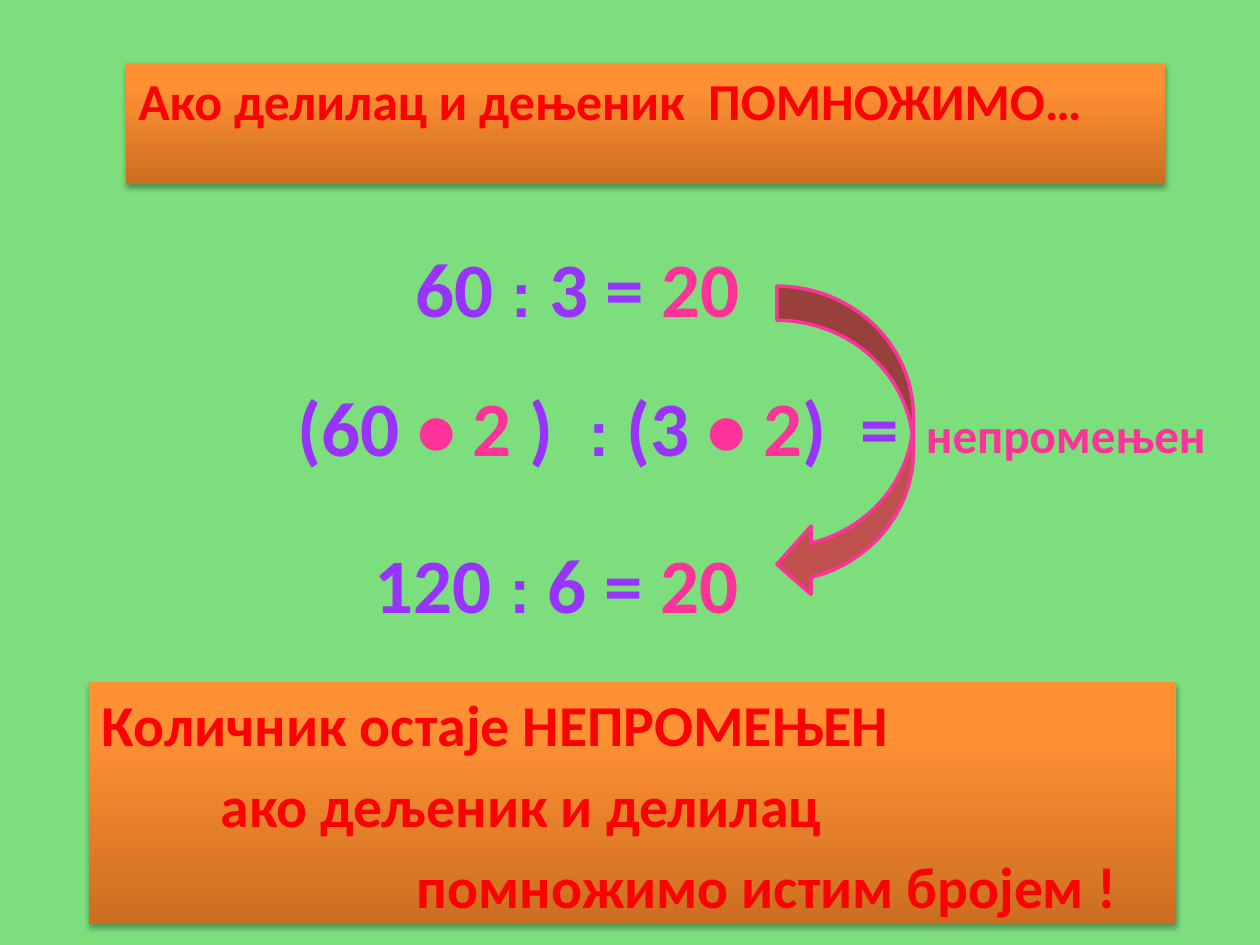
from lxml.etree import SubElement
from pptx import Presentation
from pptx.dml.color import RGBColor
from pptx.enum.shapes import MSO_SHAPE
from pptx.enum.text import MSO_ANCHOR, PP_ALIGN
from pptx.oxml import parse_xml
from pptx.oxml.ns import nsdecls, qn
from pptx.util import Pt

PURPLE, PINK, RED = "9933FF", "FF3399", "FF0000"
STOPS = [(0, "CC6E20"), (80, "FF9034"), (100, "FF9136")]


def rgb(value):
    return RGBColor.from_string(value)


class Deck:
    font = "Calibri"
    colon_font = "Arial"
    size = 44
    colon_size = 36

    def __init__(self, prs):
        self.s = prs.slides.add_slide(prs.slide_layouts[6])

    def background(self, color):
        fill = self.s.background.fill
        fill.solid()
        fill.fore_color.rgb = rgb(color)

    def run(self, p, text, color, size, font=None):
        r = p.add_run()
        r.text = text
        r.font.name = font or self.font
        r.font.size = Pt(size)
        r.font.bold = True
        r.font.color.rgb = rgb(color)

    def text(self, x, y, w, h):
        tf = self.s.shapes.add_textbox(Pt(x), Pt(y), Pt(w), Pt(h)).text_frame
        tf.word_wrap = True
        return tf

    def equation(self, x, y, parts):
        tf = self.text(x, y, 648, 90)
        tf.vertical_anchor = MSO_ANCHOR.MIDDLE
        p = tf.paragraphs[0]
        p.alignment = PP_ALIGN.CENTER
        for text, color in parts:
            if text.strip() == ":":
                self.run(p, text, color, self.colon_size, self.colon_font)
            else:
                self.run(p, text, color, self.size)

    def label(self, x, y, w, h, text, color, size):
        self.run(self.text(x, y, w, h).paragraphs[0], text, color, size)

    def shape(self, kind, x, y, w, h):
        sp = self.s.shapes.add_shape(kind, Pt(x), Pt(y), Pt(w), Pt(h))
        sp.shadow.inherit = False
        return sp

    def panel(self, x, y, w, h, size, lines):
        sp = self.shape(MSO_SHAPE.RECTANGLE, x, y, w, h)
        sp.line.fill.background()
        self.gradient(sp)
        self.shadow(sp)
        tf = sp.text_frame
        tf.word_wrap = True
        tf.vertical_anchor = MSO_ANCHOR.TOP
        for i, (indent, text) in enumerate(lines):
            p = tf.add_paragraph() if i else tf.paragraphs[0]
            p.alignment = PP_ALIGN.LEFT
            p.space_before = Pt(size * 0.2)
            p._p.get_or_add_pPr().set("marL", str(Pt(indent)))
            self.run(p, text, RED, size)

    def gradient(self, sp):
        sp.fill.gradient()
        sp.fill.gradient_angle = 90
        stops = sp._element.spPr.find(qn("a:gradFill")).find(qn("a:gsLst"))
        for old in list(stops):
            stops.remove(old)
        for pos, color in STOPS:
            gs = SubElement(stops, qn("a:gs"), pos=str(pos * 1000))
            SubElement(gs, qn("a:srgbClr"), val=color)

    def shadow(self, sp):
        effects = sp._element.spPr.find(qn("a:effectLst"))
        effects.append(parse_xml(
            f'<a:outerShdw {nsdecls("a")} blurRad="{Pt(3.1)}" dist="{Pt(1.8)}" '
            'dir="5400000" rotWithShape="0"><a:srgbClr val="000000">'
            '<a:alpha val="35000"/></a:srgbClr></a:outerShdw>'))

    def curved_arrow(self, x, y, w, h, fill, line):
        sp = self.shape(MSO_SHAPE.CURVED_LEFT_ARROW, x, y, w, h)
        sp.fill.solid()
        sp.fill.fore_color.rgb = rgb(fill)
        sp.line.color.rgb = rgb(line)
        sp.line.width = Pt(2)


def main():
    prs = Presentation()
    prs.slide_width, prs.slide_height = Pt(720), Pt(540)
    d = Deck(prs)
    d.background("7DDE7D")
    d.equation(18, 198, [
        ("(60 ", PURPLE), ("• 2 ", PINK), (")  ", PURPLE), (": ", PURPLE),
        ("(3 ", PURPLE), ("• 2", PINK), (")  =", PURPLE)])
    d.panel(51, 390, 621, 138, 33, [
        (0, "Количник остаје НЕПРОМЕЊЕН"),
        (68, "ако дељеник и делилац"),
        (180, "помножимо истим бројем !")])
    d.panel(72, 36, 594, 69, 29.6, [
        (0, "Ако делилац и дењеник  ПОМНОЖИМО…")])
    d.equation(6, 119, [
        ("60 ", PURPLE), (": ", PURPLE), ("3 = ", PURPLE), ("20", PINK)])
    d.equation(-6, 288, [
        ("120 ", PURPLE), (":", PURPLE), (" 6 = ", PURPLE), ("20", PINK)])
    d.curved_arrow(444, 163.5, 78, 178.5, "C0504D", PINK)
    d.label(522, 227.5, 180, 41, "непромењен", PINK, 28)
    prs.save("out.pptx")


if __name__ == "__main__":
    main()
